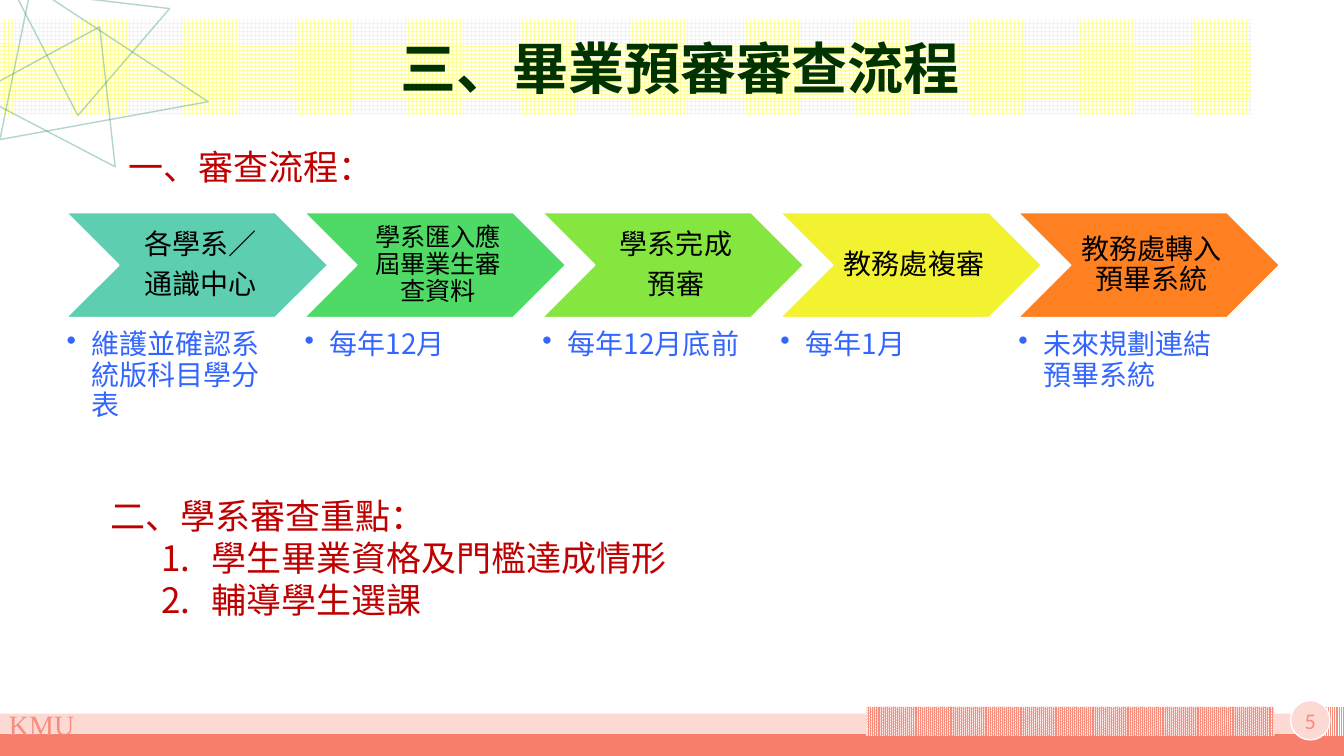
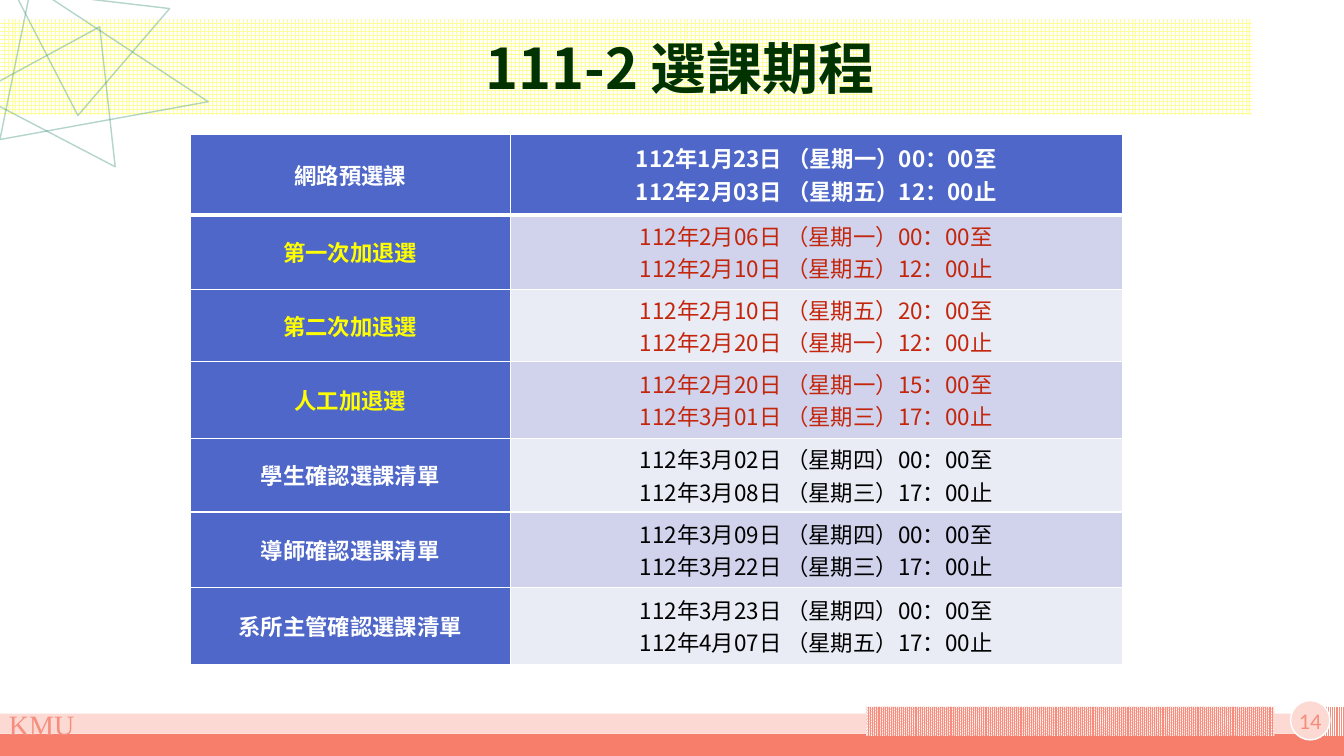
from dataclasses import dataclass

from lxml.etree import SubElement
from pptx import Presentation
from pptx.dml.color import RGBColor as RGB
from pptx.enum.dml import MSO_PATTERN as Pat
from pptx.enum.shapes import MSO_SHAPE as Kind
from pptx.enum.text import MSO_ANCHOR as Anchor, PP_ALIGN as Align
from pptx.oxml.ns import qn
from pptx.util import Emu, Pt

SCALE = 9144  # EMU in one px, 100 px to the inch
SANS = "Noto Sans CJK SC"

WHITE = RGB(0xFF, 0xFF, 0xFF)
BLACK = RGB(0x00, 0x00, 0x00)
CORAL = RGB(0xF6, 0x7E, 0x6A)
ROSE = RGB(0xF7, 0x8D, 0x7C)
BLUSH = RGB(0xFC, 0xD9, 0xD3)
LEMON = RGB(0xFF, 0xFF, 0x99)
TEAL = RGB(0x42, 0x97, 0x80)
FOREST = RGB(0x00, 0x33, 0x00)
CRIMSON = RGB(0xC0, 0x00, 0x00)
AZURE = RGB(0x33, 0x66, 0xFF)
INDIGO = RGB(0x4E, 0x67, 0xC8)
LILAC = RGB(0xD0, 0xD3, 0xEB)
MIST = RGB(0xE9, 0xEB, 0xF5)
YELLOW = RGB(0xFF, 0xFF, 0x00)
BRICK = RGB(0xC3, 0x26, 0x0C)


@dataclass(frozen=True)
class Box:
    left: int
    top: int
    width: int
    height: int

    def emu(self) -> list[Emu]:
        return [px(n) for n in (self.left, self.top, self.width, self.height)]


@dataclass(frozen=True)
class Band:
    box: Box
    color: RGB
    pattern: Pat | None = None


@dataclass(frozen=True)
class Ray:
    box: Box
    angle: float


@dataclass(frozen=True)
class Step:
    label: str
    note: str
    color: RGB
    size: int = 20


@dataclass(frozen=True)
class Term:
    name: str
    dates: str
    height: int
    ink: RGB = WHITE
    date_ink: RGB = BLACK


BANDS = [
    Band(Box(0, 19, 1242, 95), LEMON, Pat.LARGE_GRID),
    Band(Box(0, 728, 1335, 22), CORAL),
    Band(Box(-1, 708, 1335, 20), BLUSH),
    Band(Box(1294, 701, 40, 29), ROSE, Pat.NARROW_VERTICAL),
    Band(Box(859, 701, 405, 29), ROSE, Pat.PERCENT_90),
]
RAYS = [
    Ray(Box(-6, 20, 156, 116), 27.6),
    Ray(Box(6, -1, 156, 116), 186.7),
    Ray(Box(33, -16, 156, 195), 101.5),
]
STEPS = [
    Step("各學系／\n通識中心", "維護並確認系統版科目學分表", RGB(0x5D, 0xCE, 0xAF)),
    Step("學系匯入應屆畢業生審查資料", "每年12月", RGB(0x4E, 0xDA, 0x64), 18),
    Step("學系完成\n預審", "每年12月底前", RGB(0x86, 0xE6, 0x40)),
    Step("教務處複審", "每年1月", RGB(0xF2, 0xF2, 0x30)),
    Step("教務處轉入預畢系統", "未來規劃連結預畢系統", RGB(0xFF, 0x80, 0x21)),
]
TERMS = [
    Term("網路預選課", "112年1月23日 （星期一）00：00至\n112年2月03日 （星期五）12：00止",
         80, WHITE, WHITE),
    Term("第一次加退選", "112年2月06日 （星期一）00：00至\n112年2月10日 （星期五）12：00止",
         74, YELLOW, BRICK),
    Term("第二次加退選", "112年2月10日 （星期五）20：00至\n112年2月20日 （星期一）12：00止",
         72, YELLOW, BRICK),
    Term("人工加退選", "112年2月20日 （星期一）15：00至\n112年3月01日 （星期三）17：00止",
         76, YELLOW, BRICK),
    Term("學生確認選課清單", "112年3月02日 （星期四）00：00至\n112年3月08日 （星期三）17：00止", 73),
    Term("導師確認選課清單", "112年3月09日 （星期四）00：00至\n112年3月22日 （星期三）17：00止", 75),
    Term("系所主管確認選課清單", "112年3月23日 （星期四）00：00至\n112年4月07日 （星期五）17：00止", 76),
]


def px(n: int) -> Emu:
    return Emu(n * SCALE)


def style(frame, size: int, ink: RGB, font: str = SANS, bold: bool = False,
          align: Align = Align.LEFT) -> None:
    for para in frame.paragraphs:
        para.alignment = align
        for run in para.runs:
            run.font.size = Pt(size)
            run.font.bold = bold
            run.font.color.rgb = ink
            run.font.name = font
            SubElement(run.font._element, qn("a:ea"), typeface=font)


def inset(frame, left: int = 0, rest: int = 0) -> None:
    frame.margin_left = px(left)
    frame.margin_top = frame.margin_right = frame.margin_bottom = px(rest)


def space(frame, after: int) -> None:
    for para in frame.paragraphs:
        para.line_spacing = 0.9
        para.space_after = Pt(after)


def indent(para, left: int, first: int = 0):
    """Set the margin and first-line indent; return the properties element."""
    props = para._p.get_or_add_pPr()
    props.set("marL", str(px(left)))
    props.set("indent", str(px(first)))
    return props


def add_shape(slide, kind: Kind, box: Box, fill: RGB | None = None,
              line: RGB | None = None):
    shape = slide.shapes.add_shape(kind, *box.emu())
    shape.shadow.inherit = False
    if fill is None:
        shape.fill.background()
    else:
        shape.fill.solid()
        shape.fill.fore_color.rgb = fill
    if line is None:
        shape.line.fill.background()
    else:
        shape.line.color.rgb = line
        shape.line.width = Pt(1)
    return shape


def add_text(slide, box: Box, text: str, wrap: bool = True):
    frame = slide.shapes.add_textbox(*box.emu()).text_frame
    frame.word_wrap = wrap
    frame.text = text
    return frame


def add_band(slide, band: Band) -> None:
    fill = add_shape(slide, Kind.RECTANGLE, band.box, band.color).fill
    if band.pattern is not None:
        fill.patterned()
        fill.pattern = band.pattern
        fill.fore_color.rgb = band.color
        fill.back_color.rgb = WHITE


def add_ray(slide, ray: Ray) -> None:
    shape = add_shape(slide, Kind.FLOWCHART_EXTRACT, ray.box, line=TEAL)
    shape.rotation = ray.angle
    for color in shape.element.xpath(".//a:ln//a:srgbClr"):
        SubElement(color, qn("a:alpha"), val="40000")


def add_slide(deck, title: str, number: int):
    """Add a slide with the shared bands, star, footer and title."""
    slide = deck.slides.add_slide(deck.slide_layouts[5])
    for band in BANDS:
        add_band(slide, band)
    mark = add_text(slide, Box(-1, 697, 86, 44), "KMU", wrap=False)
    style(mark, 20, ROSE, "Times New Roman")
    for ray in RAYS:
        add_ray(slide, ray)
    badge = add_shape(slide, Kind.OVAL, Box(1280, 695, 39, 39), BLUSH, WHITE).text_frame
    badge.text = str(number)
    badge.vertical_anchor = Anchor.MIDDLE
    inset(badge)
    style(badge, 16, ROSE, "Calibri", align=Align.CENTER)

    head = slide.shapes.title
    head.left, head.top, head.width, head.height = Box(0, 22, 1242, 90).emu()
    head.element.getparent().append(head.element)
    frame = head.text_frame
    frame.text = title
    frame.vertical_anchor = Anchor.MIDDLE
    inset(frame)
    indent(frame.paragraphs[0], 107)
    style(frame, 40, FOREST, bold=True, align=Align.CENTER)
    return slide


def add_step(slide, step: Step, left: int) -> None:
    arrow = add_shape(slide, Kind.CHEVRON, Box(left, 211, 259, 104), step.color, WHITE)
    frame = arrow.text_frame
    frame.text = step.label
    frame.word_wrap = True
    frame.vertical_anchor = Anchor.MIDDLE
    inset(frame, 9, 3)
    space(frame, 7)
    style(frame, step.size, BLACK, align=Align.CENTER)

    note = add_text(slide, Box(left, 328, 208, 128), step.note)
    inset(note)
    SubElement(indent(note.paragraphs[0], 25, -25), qn("a:buChar"), char="•")
    space(note, 3)
    style(note, 20, AZURE)


def edge(cell, side: str, width: int) -> None:
    """Draw one white cell border, ahead of the cell fill."""
    line = SubElement(cell._tc.get_or_add_tcPr(), qn(f"a:{side}"), w=str(Pt(width)))
    fill = SubElement(line, qn("a:solidFill"))
    SubElement(fill, qn("a:srgbClr"), val=str(WHITE))


def set_cell(cell, text: str, ink: RGB, fill: RGB, bold: bool, row: int) -> None:
    cell.text = text
    cell.vertical_anchor = Anchor.MIDDLE
    cell.margin_left = cell.margin_right = px(5)
    cell.margin_top = cell.margin_bottom = 0
    edge(cell, "lnL", 1)
    edge(cell, "lnR", 1)
    edge(cell, "lnT", 3 if row == 1 else 1)
    edge(cell, "lnB", 3 if row == 0 else 1)
    cell.fill.solid()
    cell.fill.fore_color.rgb = fill
    style(cell.text_frame, 16, ink, bold=bold, align=Align.CENTER)


def add_terms(slide) -> None:
    box = Box(189, 133, 924, sum(term.height for term in TERMS))
    table = slide.shapes.add_table(len(TERMS), 2, *box.emu()).table
    table.horz_banding = False
    for col, width in zip(table.columns, (317, 607)):
        col.width = px(width)
    for row, term in enumerate(TERMS):
        table.rows[row].height = px(term.height)
        first = row == 0
        fill = INDIGO if first else LILAC if row % 2 else MIST
        set_cell(table.cell(row, 0), term.name, term.ink, INDIGO, True, row)
        set_cell(table.cell(row, 1), term.dates, term.date_ink, fill, first, row)


def add_flow(slide) -> None:
    for i, step in enumerate(STEPS):
        add_step(slide, step, 66 + 236 * i)
    focus = add_text(slide, Box(100, 486, 650, 178),
                     "二、學系審查重點：\n學生畢業資格及門檻達成情形\n輔導學生選課")
    for para in focus.paragraphs[1:]:
        SubElement(indent(para, 100, -50), qn("a:buAutoNum"), type="arabicPeriod")
    style(focus, 25, CRIMSON)
    style(add_text(slide, Box(118, 139, 650, 52), "一、審查流程："), 25, CRIMSON)


def main() -> None:
    deck = Presentation()
    deck.slide_width, deck.slide_height = px(1333), px(750)
    add_flow(add_slide(deck, "三、畢業預審審查流程", 5))
    add_terms(add_slide(deck, "111-2 選課期程", 14))
    deck.save("out.pptx")


if __name__ == "__main__":
    main()
